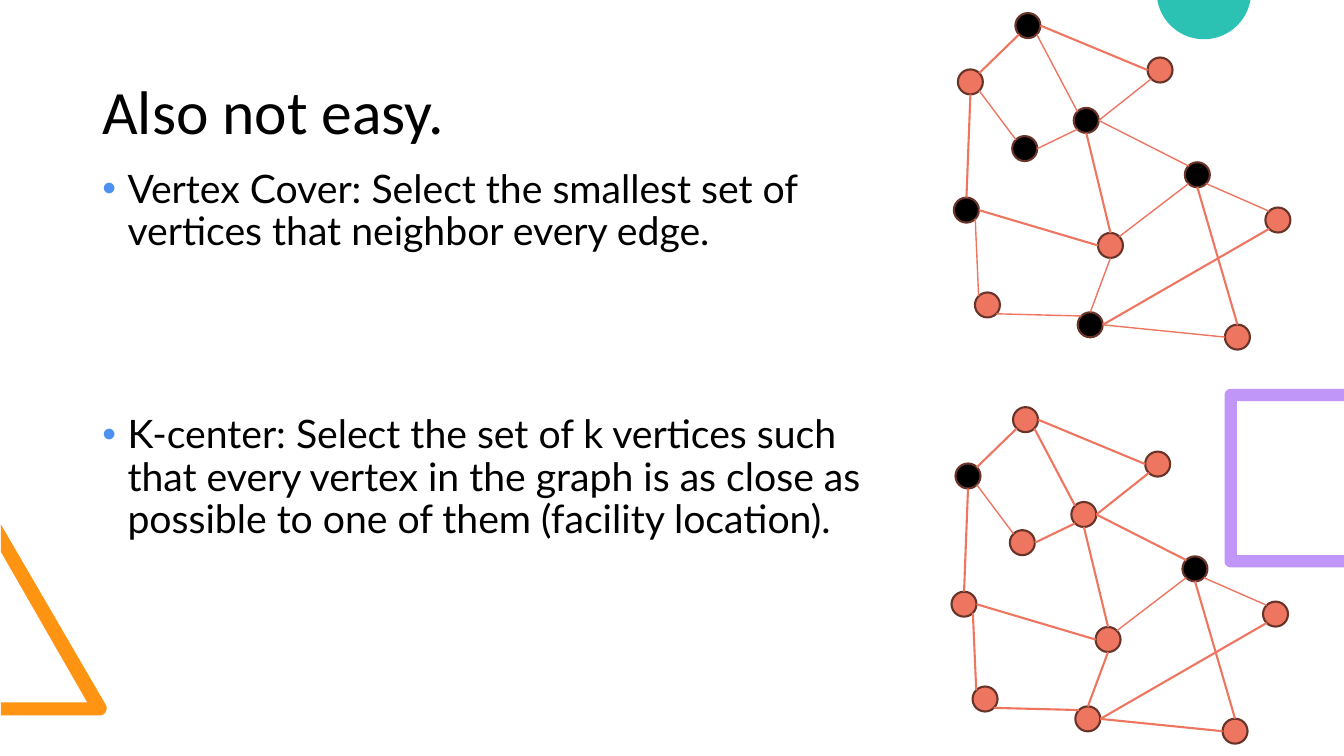
import math

from lxml import etree
from pptx import Presentation
from pptx.dml.color import RGBColor
from pptx.enum.shapes import MSO_CONNECTOR, MSO_SHAPE
from pptx.enum.text import MSO_ANCHOR, PP_ALIGN
from pptx.oxml.ns import qn
from pptx.util import Cm, Pt

STRAIGHT = MSO_CONNECTOR.STRAIGHT
OVAL = MSO_SHAPE.OVAL
MIDDLE = MSO_ANCHOR.MIDDLE
TOP = MSO_ANCHOR.TOP
LEFT = PP_ALIGN.LEFT

BLACK = RGBColor(0x00, 0x00, 0x00)
CORAL = RGBColor(0xEE, 0x76, 0x60)
BROWN = RGBColor(0x68, 0x34, 0x2A)
ORANGE = RGBColor(0xFF, 0x94, 0x13)
TEAL = RGBColor(0x2B, 0xC2, 0xB4)
PURPLE = RGBColor(0xC0, 0x97, 0xF8)
BULLET_BLUE = RGBColor(0x4D, 0x90, 0xEF)

PAGE_WIDTH, PAGE_HEIGHT = 33.87, 19.05
NODE_SIZE = 0.63
COMPASS = ("E", "SE", "S", "SW", "W", "NW", "N", "NE")

NODES = {
    "A": (0.1, 1.42), "B": (1.47, 3.1), "C": (3.02, 2.39), "D": (0, 4.65),
    "E": (3.12, 7.54), "F": (5.82, 3.76), "G": (1.55, 0), "H": (3.63, 5.54),
    "I": (0.53, 7.04), "J": (6.83, 7.85), "K": (4.88, 1.12), "L": (7.85, 4.9),
}
EDGES = (
    ("A", "S", "D", "N"), ("A", "NE", "G", "SW"), ("G", "E", "K", "W"),
    ("C", "E", "K", "SW"), ("C", "E", "F", "NW"), ("F", "SE", "L", "NW"),
    ("H", "NE", "F", "SW"), ("C", "SW", "B", "E"), ("A", "SE", "B", "NW"),
    ("C", "S", "H", "N"), ("H", "S", "E", "N"), ("E", "E", "L", "SW"),
    ("F", "S", "J", "N"), ("E", "E", "J", "W"), ("I", "SE", "E", "NW"),
    ("D", "SE", "I", "NW"), ("H", "W", "D", "E"), ("C", "NW", "G", "SE"),
)


def arc(center_x, center_y, radius, start, end, steps=8):
    angles = [math.radians(start + (end - start) * step / steps) for step in range(steps + 1)]
    return [(center_x + radius * math.cos(a), center_y + radius * math.sin(a)) for a in angles]


def add_outline(page, points, color):
    corners = [(Cm(x), Cm(y)) for x, y in points]
    builder = page.shapes.build_freeform(*corners[0])
    builder.add_line_segments(corners[1:], close=True)
    shape = builder.convert_to_shape()
    shape.shadow.inherit = False
    shape.fill.solid()
    shape.fill.fore_color.rgb = color
    shape.line.fill.background()


def add_triangle(page, left, top, width, height):
    right, bottom = left + width, top + height
    rounded = arc(right - 0.18, bottom - 0.18, 0.18, -30, 90)
    points = [(left, bottom), (left, bottom - 0.33), (left + 2.18, bottom - 0.33),
              (left, top + 0.69), (left, top)]
    add_outline(page, points + rounded, ORANGE)


def add_circle_segment(page, center_x, center_y, radius):
    cut = math.degrees(math.asin(-center_y / radius))
    add_outline(page, arc(center_x, center_y, radius, cut, 180 - cut, 40), TEAL)


def add_open_frame(page, left, top, width, height):
    right, bottom = left + width, top + height
    band, radius = 0.31, 0.16
    points = [(right, bottom), (right, bottom - band), (left + band, bottom - band),
              (left + band, top + band), (right, top + band), (right, top)]
    points += arc(left + radius, top + radius, radius, 270, 180)
    points += arc(left + radius, bottom - radius, radius, 180, 90)
    add_outline(page, points, PURPLE)


def add_text(page, text, left, top, width, height, font, size, anchor=TOP,
             bullet=False, before=(0,), after=0):
    box = page.shapes.add_textbox(Cm(left), Cm(top), Cm(width), Cm(height))
    frame = box.text_frame
    frame.word_wrap = True
    frame.vertical_anchor = anchor
    for index, (line, gap) in enumerate(zip(text, before)):
        para = frame.add_paragraph() if index else frame.paragraphs[0]
        para.alignment = LEFT
        para.line_spacing = 0.9
        para.space_before = Pt(gap)
        para.space_after = Pt(after)
        span = para.add_run()
        span.text = line
        span.font.name = font
        span.font.size = Pt(size)
        span.font.color.rgb = BLACK
        if bullet:
            add_bullet(para)


def add_bullet(para):
    properties = para._p.get_or_add_pPr()
    properties.set("marL", str(Pt(18)))
    properties.set("indent", str(-Pt(18)))
    color = etree.SubElement(properties, qn("a:buClr"))
    etree.SubElement(color, qn("a:srgbClr"), val=str(BULLET_BLUE))
    etree.SubElement(properties, qn("a:buFont"), typeface="Arial")
    etree.SubElement(properties, qn("a:buChar"), char="•")


def add_graph(page, left, top, selected, thin):
    radius = NODE_SIZE / 2

    def site(node, direction):
        angle = math.radians(45 * COMPASS.index(direction))
        x, y = NODES[node]
        return (Cm(left + x + radius + radius * math.cos(angle)),
                Cm(top + y + radius + radius * math.sin(angle)))

    for name, (x, y) in NODES.items():
        node = page.shapes.add_shape(OVAL, Cm(left + x), Cm(top + y), Cm(NODE_SIZE), Cm(NODE_SIZE))
        node.shadow.inherit = False
        node.fill.solid()
        node.fill.fore_color.rgb = BLACK if name in selected else CORAL
        node.line.color.rgb = BROWN
        node.line.width = Pt(1.5)

    for start, start_side, end, end_side in EDGES:
        edge = page.shapes.add_connector(STRAIGHT, *site(start, start_side), *site(end, end_side))
        edge.line.color.rgb = CORAL
        edge.line.width = Pt(1 if start + end in thin else 1.5)
        etree.SubElement(edge._element.spPr, qn("a:effectLst"))


def build_problem_slide(deck):
    page = deck.slides.add_slide(deck.slide_layouts[6])
    add_triangle(page, 0.02, 13.21, 2.67, 4.82)
    add_circle_segment(page, 30.34, -0.2, 1.19)
    add_open_frame(page, 30.86, 9.8, PAGE_WIDTH - 30.86, 4.5)
    add_text(page, ["Also not easy."], 2.33, 0.84, 29.21, 4.09, "Calibri", 44, anchor=MIDDLE)
    problems = [
        "Vertex Cover: Select the smallest set of vertices that neighbor every edge.",
        "K-center: Select the set of k vertices such that every vertex in the graph "
        "is as close as possible to one of them (facility location).",
    ]
    add_text(page, problems, 2.33, 4.14, 20.37, 14.91, "Lato", 28,
             bullet=True, before=(10, 107), after=8)
    add_graph(page, 23.98, 10.26, selected="AF", thin=("FL", "HF", "AB"))
    add_graph(page, 24.04, 0.33, selected="BCDEFG",
              thin=("CK", "CF", "FL", "HF", "CB", "AB", "HE", "EJ", "IE", "DI", "CG"))


def main():
    deck = Presentation()
    deck.slide_width, deck.slide_height = Cm(PAGE_WIDTH), Cm(PAGE_HEIGHT)
    build_problem_slide(deck)
    deck.save("out.pptx")


if __name__ == "__main__":
    main()
